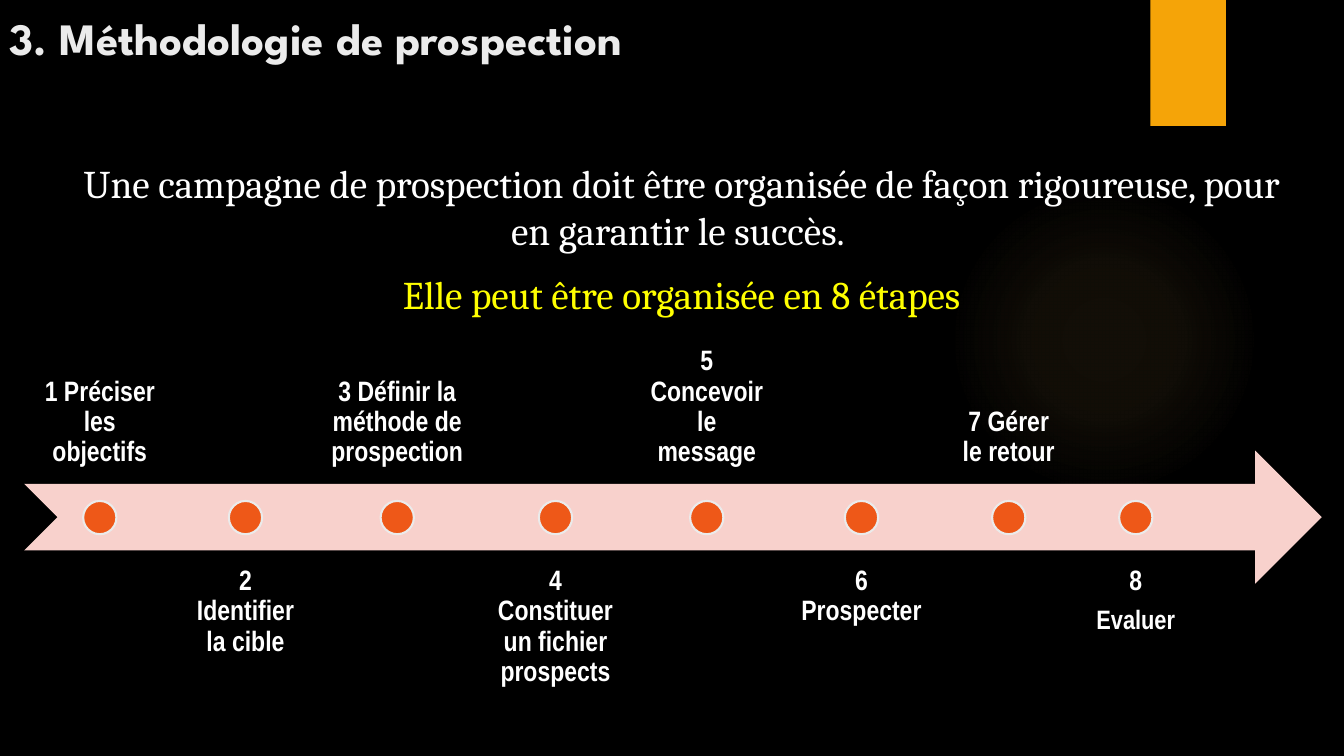
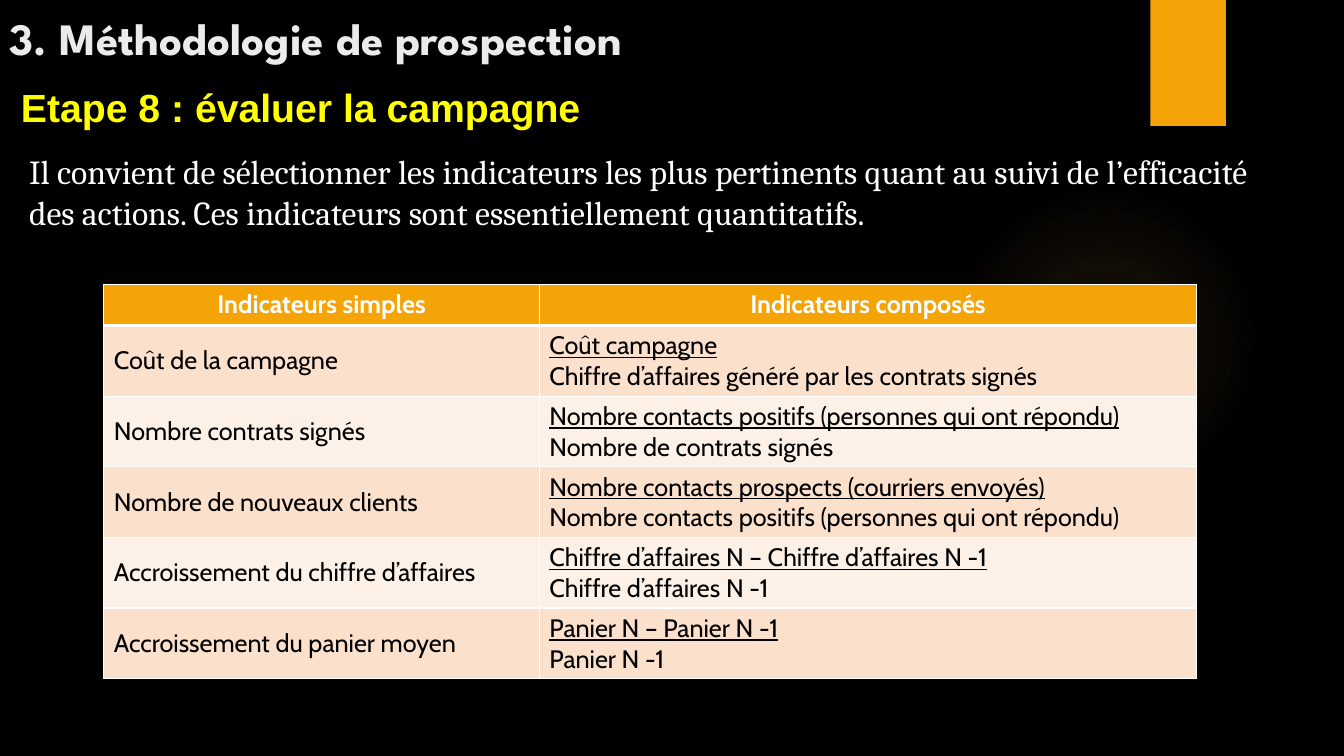
from dataclasses import dataclass
from typing import Any

from lxml import etree
from pptx import Presentation
from pptx import util as u
from pptx.dml.color import RGBColor
from pptx.enum import shapes, text
from pptx.oxml import parse_xml
from pptx.oxml.ns import nsdecls, qn

BLACK, WHITE, YELLOW = "000000", "FFFFFF", "FFFF00"
AMBER, GLOW, PALE = "F5A408", "FAC96A", "EBEBEB"
ARROW, DOT = "F8D1CC", "EE5818"
BANDS = ("FBE0CC", "FDF0E7")

LEFT, CENTER = text.PP_ALIGN.LEFT, text.PP_ALIGN.CENTER
TOP, MIDDLE, BOTTOM = (
    text.MSO_ANCHOR.TOP, text.MSO_ANCHOR.MIDDLE, text.MSO_ANCHOR.BOTTOM)

TITLE = "3. Méthodologie de prospection"
LABEL_TOPS = {BOTTOM: 3.48, TOP: 5.46}
LABEL_HEIGHT, LABEL_GAP = 1.32, 0.03
LABEL_INSETS = {"left": 0.15, "right": 0.15, "top": 0.16, "bottom": 0.16}
DOT_SIZE, DOT_TOP = 0.33, 4.97
HEADER_HEIGHT, ROW_HEIGHT = 0.41, 0.7


@dataclass(frozen=True)
class Style:
    font: str
    size: float
    color: str
    bold: bool = False
    underline: bool = False
    align: Any = LEFT
    before: float = 0
    after: float = 0
    spacing: float = 1.0


@dataclass(frozen=True)
class Line:
    words: str
    style: Style


@dataclass(frozen=True)
class Box:
    left: float
    top: float
    width: float
    height: float

    def lengths(self) -> list[int]:
        return [u.Inches(v) for v in (self.left, self.top, self.width, self.height)]


@dataclass(frozen=True)
class Step:
    width: float
    lines: tuple[str, ...]


@dataclass(frozen=True)
class Indicator:
    simple: str
    numerator: str
    denominator: str


TITLE_STYLE = Style("League Spartan", 32, PALE, bold=True)
INTRO = Style("Cambria", 28, WHITE, align=CENTER)
INTRO_ACCENT = Style("Cambria", 28, YELLOW, align=CENTER, before=12)
SUBTITLE = Style("Arial", 28, YELLOW, bold=True)
BODY = Style("Cambria", 24, WHITE)
STEP = Style("Arial Narrow", 20, WHITE, bold=True, align=CENTER, after=7, spacing=0.9)
STEP_SMALL = Style("Arial Narrow", 19, WHITE, bold=True, align=CENTER, after=7, spacing=0.9)
HEADER = Style("Cabin", 18, WHITE, bold=True, align=CENTER)
CELL = Style("Cabin", 18, BLACK)
CELL_UNDERLINED = Style("Cabin", 18, BLACK, underline=True)

STEPS = (
    Step(1.5, ("1 Préciser les objectifs",)),
    Step(1.33, ("2 Identifier la cible",)),
    Step(1.62, ("3 Définir la méthode de prospection",)),
    Step(1.46, ("4 Constituer un fichier prospects",)),
    Step(1.48, ("5 Concevoir le message",)),
    Step(1.53, ("6 Prospecter",)),
    Step(1.33, ("7 Gérer\vle retour",)),
    Step(1.13, ("8", "Evaluer")),
)

HEADINGS = ("Indicateurs simples", "Indicateurs composés")
INDICATORS = (
    Indicator("Coût de la campagne", "Coût campagne",
              "Chiffre d’affaires généré par les contrats signés"),
    Indicator("Nombre contrats signés",
              "Nombre contacts positifs (personnes qui ont répondu)",
              "Nombre de contrats signés"),
    Indicator("Nombre de nouveaux clients",
              "Nombre contacts prospects (courriers envoyés)",
              "Nombre contacts positifs (personnes qui ont répondu)"),
    Indicator("Accroissement du chiffre d’affaires",
              "Chiffre d’affaires N – Chiffre d’affaires N -1",
              "Chiffre d’affaires N -1"),
    Indicator("Accroissement du panier moyen", "Panier N – Panier N -1", "Panier N -1"),
)


def paint(color_format: Any, color: str) -> None:
    color_format.rgb = RGBColor.from_string(color)


def fill_solid(fill: Any, color: str) -> None:
    fill.solid()
    paint(fill.fore_color, color)


def apply(target: Any, values: dict[str, Any]) -> None:
    for name, value in values.items():
        setattr(target, name, value)


def write(frame: Any, lines: list[Line]) -> None:
    """Fill a text frame with one paragraph per line."""
    for index, line in enumerate(lines):
        style = line.style
        para = frame.add_paragraph() if index else frame.paragraphs[0]
        para.text = line.words
        apply(para, {
            "alignment": style.align,
            "space_before": u.Pt(style.before),
            "space_after": u.Pt(style.after),
            "line_spacing": style.spacing,
        })
        for span in para.runs:
            apply(span.font, {
                "name": style.font,
                "size": u.Pt(style.size),
                "bold": style.bold,
                "underline": style.underline,
            })
            paint(span.font.color, style.color)


def add_text(page: Any, box: Box, lines: list[Line], anchor: Any = TOP,
             insets: dict[str, float] | None = None) -> None:
    frame = page.shapes.add_textbox(*box.lengths()).text_frame
    apply(frame, {"word_wrap": True, "vertical_anchor": anchor})
    if insets:
        apply(frame, {f"margin_{side}": u.Inches(inset) for side, inset in insets.items()})
    write(frame, lines)


def add_shape(page: Any, kind: Any, box: Box, fill: str, line: str | None = None) -> Any:
    shape = page.shapes.add_shape(kind, *box.lengths())
    shape.shadow.inherit = False
    fill_solid(shape.fill, fill)
    if line:
        paint(shape.line.color, line)
        shape.line.width = u.Pt(1.5)
    else:
        shape.line.fill.background()
    return shape


def add_glow(page: Any) -> None:
    """Faint round light that fades to nothing."""
    glow = add_shape(page, shapes.MSO_SHAPE.OVAL, Box(9.41, 1.83, 3.08, 3.08), GLOW)
    stops = "".join(
        f'<a:gs pos="{place * 1000}"><a:srgbClr val="{GLOW}">'
        f'<a:alpha val="{alpha * 1000}"/></a:srgbClr></a:gs>'
        for place, alpha in ((0, 7), (36, 6), (69, 0), (100, 0)))
    gradient = parse_xml(
        f'<a:gradFill {nsdecls("a")} rotWithShape="1"><a:gsLst>{stops}</a:gsLst>'
        '<a:path path="circle"><a:fillToRect l="50000" t="50000" r="50000" b="50000"/>'
        '</a:path></a:gradFill>')
    properties = glow.element.spPr
    properties.replace(properties.find(qn("a:solidFill")), gradient)


def add_page(deck: Any) -> Any:
    """Blank slide with the shared background, glow, band and title."""
    page = deck.slides.add_slide(deck.slide_layouts[6])
    fill_solid(page.background.fill, BLACK)
    add_glow(page)
    add_shape(page, shapes.MSO_SHAPE.RECTANGLE, Box(11.41, 0, 0.75, 1.25), AMBER)
    add_text(page, Box(0, 0, 9.65, 0.69), [Line(TITLE, TITLE_STYLE)], BOTTOM)
    return page


def add_timeline(page: Any) -> None:
    """Arrow with a dot per step, labels alternately above and below."""
    left = 0.24
    add_shape(page, shapes.MSO_SHAPE.NOTCHED_RIGHT_ARROW,
              Box(left, 4.47, 12.87, LABEL_HEIGHT), ARROW)
    for index, step in enumerate(STEPS):
        anchor = TOP if index % 2 else BOTTOM
        lines = [Line(words, STEP_SMALL if row else STEP)
                 for row, words in enumerate(step.lines)]
        add_text(page, Box(left, LABEL_TOPS[anchor], step.width, LABEL_HEIGHT),
                 lines, anchor, LABEL_INSETS)
        dot_left = left + (step.width - DOT_SIZE) / 2
        add_shape(page, shapes.MSO_SHAPE.OVAL,
                  Box(dot_left, DOT_TOP, DOT_SIZE, DOT_SIZE), DOT, PALE)
        left += step.width + LABEL_GAP


def add_borders(cell: Any, top: float, bottom: float) -> None:
    properties = cell._tc.get_or_add_tcPr()
    for side, points in (("L", 1), ("R", 1), ("T", top), ("B", bottom)):
        border = etree.SubElement(properties, qn(f"a:ln{side}"), w=str(u.Pt(points)))
        solid = etree.SubElement(border, qn("a:solidFill"))
        etree.SubElement(solid, qn("a:srgbClr"), val=WHITE)


def add_indicators(page: Any) -> None:
    rows = [[[Line(words, HEADER)] for words in HEADINGS]]
    rows += [[[Line(item.simple, CELL)],
              [Line(item.numerator, CELL_UNDERLINED), Line(item.denominator, CELL)]]
             for item in INDICATORS]
    widths = (4.32, 6.52)
    height = HEADER_HEIGHT + ROW_HEIGHT * len(INDICATORS)
    box = Box(1.03, 2.82, sum(widths), height)
    table = page.shapes.add_table(len(rows), len(widths), *box.lengths()).table
    for column, width in zip(table.columns, widths):
        column.width = u.Inches(width)
    for index, row in enumerate(rows):
        table.rows[index].height = u.Inches(ROW_HEIGHT if index else HEADER_HEIGHT)
        for place, lines in enumerate(row):
            cell = table.cell(index, place)
            add_borders(cell, top=3 if index == 1 else 1, bottom=1 if index else 3)
            fill_solid(cell.fill, BANDS[(index - 1) % 2] if index else AMBER)
            cell.vertical_anchor = MIDDLE if index and not place else TOP
            write(cell.text_frame, lines)


def add_steps_page(deck: Any) -> None:
    page = add_page(deck)
    add_text(page, Box(0.56, 1.53, 12.4, 1.68), [
        Line("Une campagne de prospection doit être organisée de façon rigoureuse, "
             "pour en garantir le succès. ", INTRO),
        Line("Elle peut être organisée en 8 étapes", INTRO_ACCENT),
    ])
    add_timeline(page)


def add_evaluation_page(deck: Any) -> None:
    page = add_page(deck)
    add_text(page, Box(0.11, 0.78, 13.03, 0.57),
             [Line("Etape 8 : évaluer la campagne", SUBTITLE)])
    add_text(page, Box(0.19, 1.45, 12.5, 0.91), [
        Line("Il convient de sélectionner les indicateurs les plus pertinents quant au "
             "suivi de l’efficacité des actions. Ces indicateurs sont essentiellement "
             "quantitatifs.", BODY),
    ])
    add_indicators(page)


def main() -> None:
    deck = Presentation()
    deck.slide_width, deck.slide_height = u.Inches(13.33), u.Inches(7.5)
    add_steps_page(deck)
    add_evaluation_page(deck)
    deck.save("out.pptx")


if __name__ == "__main__":
    main()
